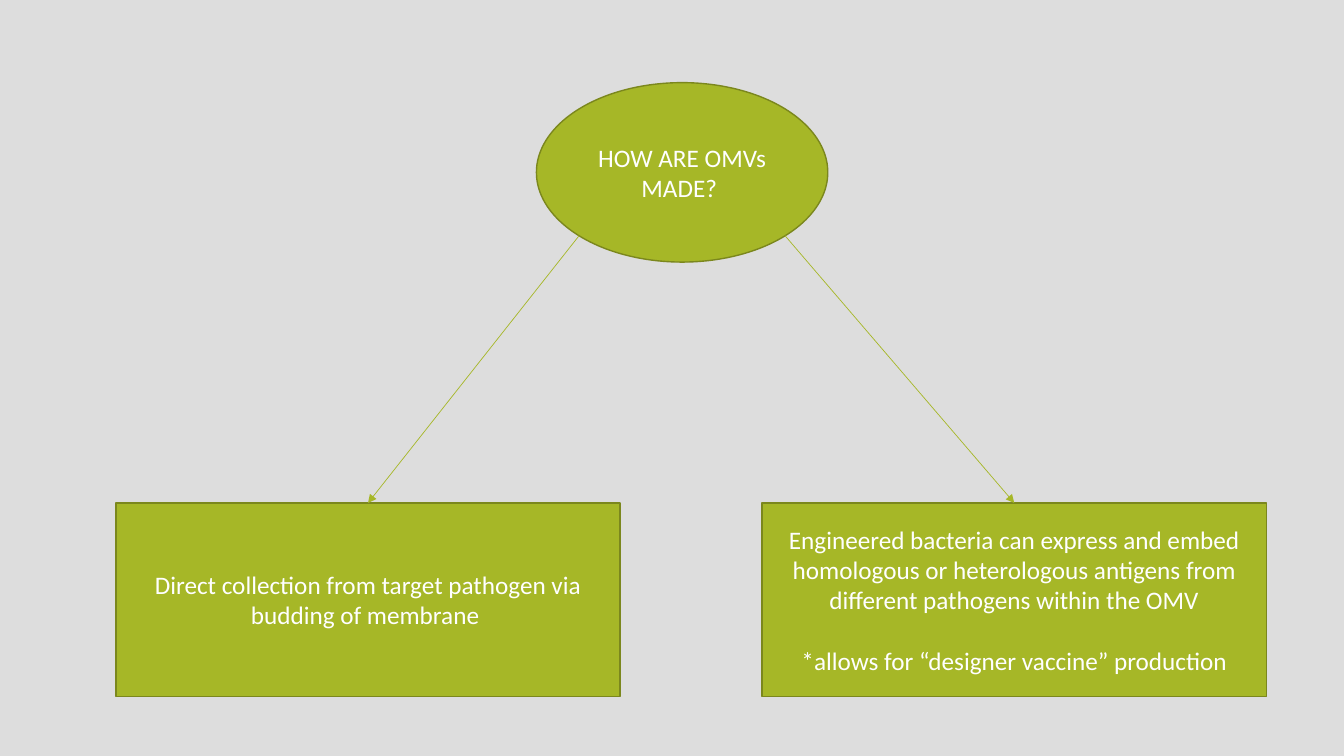
from math import sqrt

from lxml import etree
from pptx import Presentation
from pptx import util as u
from pptx.dml.color import RGBColor
from pptx.enum import shapes, text
from pptx.oxml.ns import qn

GREY = RGBColor(0xDD, 0xDD, 0xDD)
GREEN = RGBColor(0xA6, 0xB7, 0x27)
OLIVE = RGBColor(0x7B, 0x87, 0x1D)
WHITE = RGBColor(0xFF, 0xFF, 0xFF)


class Diagram:
    """Draws filled boxes and arrows on one page in a shared style."""

    font = {"name": "Calibri", "size": u.Pt(18)}
    frame = {"word_wrap": True, "vertical_anchor": text.MSO_ANCHOR.MIDDLE}
    para_format = {"alignment": text.PP_ALIGN.CENTER, "space_before": u.Pt(0)}
    para_gap = u.Pt(22)

    def __init__(self, page):
        self.page = page
        page.background.fill.solid()
        page.background.fill.fore_color.rgb = GREY

    def apply(self, target, values):
        for name, value in values.items():
            setattr(target, name, value)

    def box(self, kind, left, top, width, height, paragraphs):
        box = self.page.shapes.add_shape(
            kind, *map(u.Inches, (left, top, width, height)))
        box.shadow.inherit = False
        box.fill.solid()
        box.fill.fore_color.rgb = GREEN
        box.line.color.rgb = OLIVE
        box.line.width = u.Pt(1)
        self.apply(box.text_frame, self.frame)
        for index, words in enumerate(paragraphs):
            if index:
                para = box.text_frame.add_paragraph()
            else:
                para = box.text_frame.paragraphs[0]
            self.apply(para, self.para_format)
            if index:
                para.space_before = self.para_gap
            span = para.add_run()
            span.text = words
            self.apply(span.font, self.font)
            span.font.color.rgb = WHITE
        return box

    def arrow(self, oval, side, box):
        reach = side / sqrt(8)
        x = int(oval.left + oval.width * (0.5 + reach))
        y = int(oval.top + oval.height * (0.5 + 1 / sqrt(8)))
        arrow = self.page.shapes.add_connector(
            shapes.MSO_CONNECTOR.STRAIGHT, x, y, x, y)
        arrow.end_connect(box, 0)
        arrow.line.color.rgb = GREEN
        arrow.line.width = u.Pt(0.5)
        outline = arrow.line._get_or_add_ln()
        etree.SubElement(outline, qn("a:tailEnd"), type="triangle")
        etree.SubElement(arrow._element.spPr, qn("a:effectLst"))


def main():
    deck = Presentation()
    deck.slide_width, deck.slide_height = u.Inches(13.33), u.Inches(7.5)
    diagram = Diagram(deck.slides.add_slide(deck.slide_layouts[6]))

    question = diagram.box(
        shapes.MSO_SHAPE.OVAL, 5.32, 0.82, 2.89, 1.78, ["HOW ARE OMVs MADE? "])
    methods = [
        (1.15, -1, ["Direct collection from target pathogen via budding of membrane "]),
        (7.56, 1, ["Engineered bacteria can express and embed homologous or "
                   "heterologous antigens from different pathogens within the OMV",
                   "*allows for “designer vaccine” production"]),
    ]
    for left, side, paragraphs in methods:
        method = diagram.box(
            shapes.MSO_SHAPE.RECTANGLE, left, 4.99, 5, 1.92, paragraphs)
        diagram.arrow(question, side, method)

    deck.save("out.pptx")


if __name__ == "__main__":
    main()
